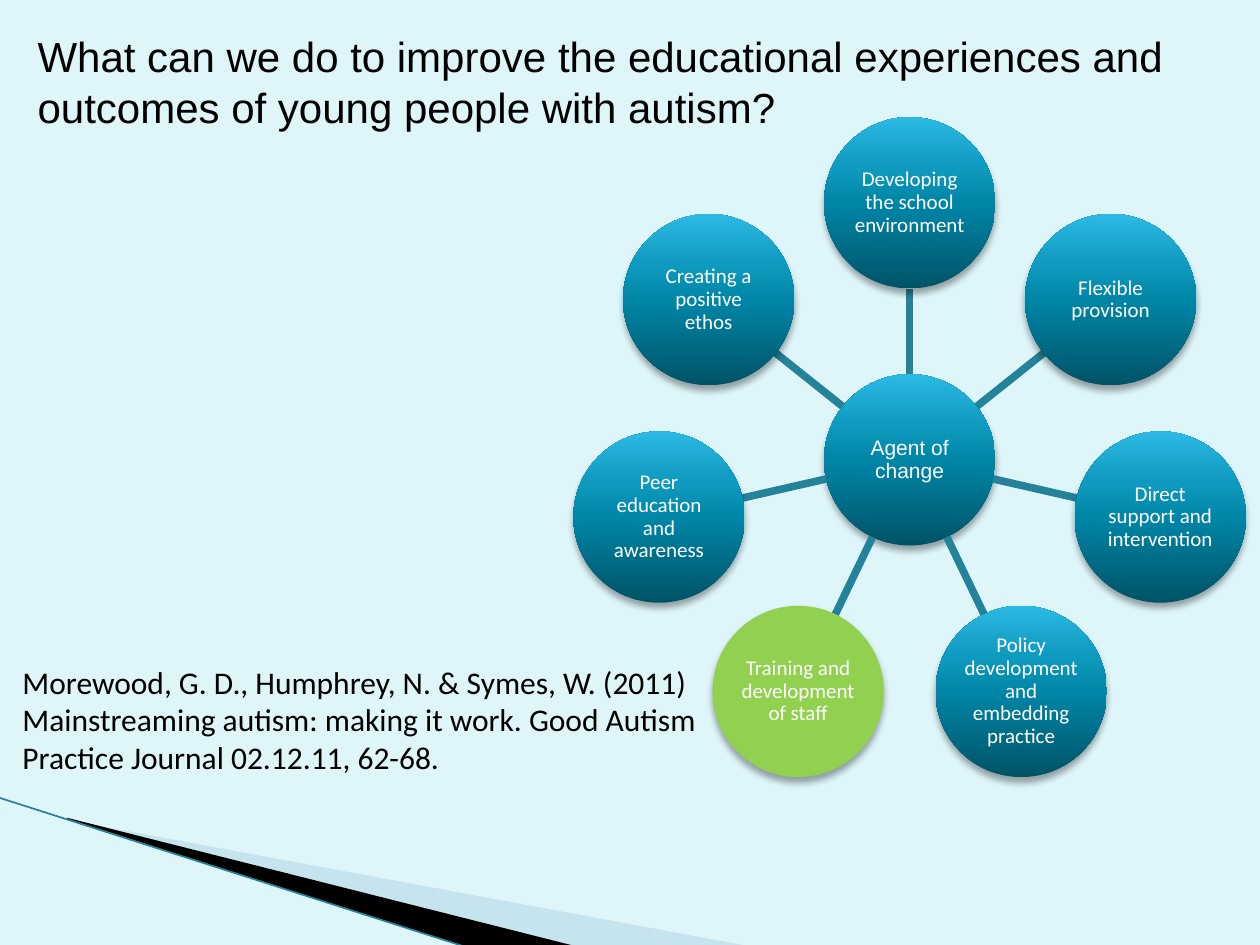
import math
from lxml import etree
from pptx import Presentation
from pptx import util as u
from pptx.dml.color import RGBColor
from pptx.enum import shapes, text
from pptx.oxml.ns import qn

COLUMNS, ROWS = 100, 75
GRADIENT = [(0, "005367"), (50, "0086A7"), (70, "0E9ABE"), (100, "2CB9E3")]
HUB = (72.2, 36.5)
RADIUS, ORBIT = 6.8, 20.4
ACTIONS = [
    "Developing the school environment",
    "Flexible provision",
    "Direct support and intervention",
    "Policy development and embedding practice",
    "Training and development of staff",
    "Peer education and awareness",
    "Creating a positive ethos",
]
HIGHLIGHT = "Training and development of staff"


def color(value):
    """Turn a hex string into a colour."""
    return RGBColor.from_string(value)


def node(parent, tag, **attributes):
    """Append a drawing element with the given attributes."""
    values = {name: str(value) for name, value in attributes.items()}
    return etree.SubElement(parent, qn(f"a:{tag}"), values)


def on_orbit(angle, distance):
    """Return the grid point at a clockwise angle from the top of the hub."""
    return HUB[0] + distance * math.sin(angle), HUB[1] - distance * math.cos(angle)


class Board:
    """Hold the style and the current page, measured in grid columns and rows."""

    def __init__(self, deck, background):
        """Add a blank page with a plain background."""
        self.page = deck.slides.add_slide(deck.slide_layouts[6])
        self.column = deck.slide_width / COLUMNS
        self.row = deck.slide_height / ROWS
        fill = self.page.background.fill
        fill.solid()
        fill.fore_color.rgb = color(background)

    def place(self, x, y):
        """Convert columns and rows to slide lengths."""
        return u.Emu(round(x * self.column)), u.Emu(round(y * self.row))

    def wording(self, frame, words, size, font, ink):
        """Set the wording of a frame and return its paragraph."""
        frame.word_wrap = True
        frame.text = words
        para = frame.paragraphs[0]
        for span in para.runs:
            span.font.size = u.Pt(size)
            span.font.name = font
            span.font.color.rgb = color(ink)
        return para

    def label(self, x, y, width, height, words, size, font, anchor):
        """Add a text box."""
        box = self.page.shapes.add_textbox(*self.place(x, y), *self.place(width, height))
        box.text_frame.vertical_anchor = anchor
        self.wording(box.text_frame, words, size, font, "000000")

    def blade(self, points, fill, opacity=100):
        """Add a filled outline without a border."""
        start, *others = [self.place(*point) for point in points]
        builder = self.page.shapes.build_freeform(*start)
        builder.add_line_segments(others, close=True)
        shape = builder.convert_to_shape()
        shape.shadow.inherit = False
        shape.fill.solid()
        shape.fill.fore_color.rgb = color(fill)
        shape.line.fill.background()
        tint = shape._element.spPr.find(".//" + qn("a:srgbClr"))
        node(tint, "alpha", val=opacity * 1000)

    def line(self, start, end, ink, width):
        """Add a straight connector."""
        link = self.page.shapes.add_connector(
            shapes.MSO_CONNECTOR.STRAIGHT, *self.place(*start), *self.place(*end))
        link.line.color.rgb = color(ink)
        link.line.width = u.Pt(width)
        node(link._element.spPr, "effectLst")

    def circle(self, center, words, font="Calibri", fill=None):
        """Add a shadowed circle with centred text, in the gradient unless a fill is given."""
        x, y = center
        shape = self.page.shapes.add_shape(
            shapes.MSO_SHAPE.OVAL, *self.place(x - RADIUS, y - RADIUS),
            *self.place(2 * RADIUS, 2 * RADIUS))
        shape.line.fill.background()
        if fill:
            shape.fill.solid()
            shape.fill.fore_color.rgb = color(fill)
        else:
            self.shade(shape)
        self.drop_shadow(shape)
        frame = shape.text_frame
        frame.margin_left = frame.margin_right = u.Inches(0.01)
        frame.margin_top = frame.margin_bottom = u.Inches(0.01)
        frame.vertical_anchor = text.MSO_ANCHOR.MIDDLE
        para = self.wording(frame, words, 12, font, "FFFFFF")
        para.alignment = text.PP_ALIGN.CENTER
        para.line_spacing = 0.9

    def shade(self, shape):
        """Fill a shape with the gradient, dark at the bottom."""
        shape.fill.gradient()
        shape.fill.gradient_angle = 90
        stops = shape._element.spPr.find(".//" + qn("a:gsLst"))
        for stop in list(stops):
            stops.remove(stop)
        for position, value in GRADIENT:
            node(node(stops, "gs", pos=position * 1000), "srgbClr", val=value)

    def drop_shadow(self, shape):
        """Give a shape a soft shadow below it."""
        shape.shadow.inherit = False
        effects = shape._element.spPr.find(qn("a:effectLst"))
        shadow = node(effects, "outerShdw", blurRad=u.Pt(4), dist=u.Pt(3),
                      dir=90 * 60000, rotWithShape=0)
        node(node(shadow, "srgbClr", val="000000"), "alpha", val=35000)


def main():
    """Build the slide and save it."""
    deck = Presentation()
    deck.slide_width, deck.slide_height = u.Inches(10), u.Inches(7.5)
    board = Board(deck, "DEF5FA")
    board.blade([(5.5, 65.1), (59.5, 75.1), (45.6, 75.1), (5.5, 65)], "A0CBDC", 40)
    board.blade([(5.3, 64.9), (45.7, 75.1), (37.2, 75.2), (5.4, 65)], "000000")
    board.line((-0.1, 63.3), (37.1, 75.2), "248299", 0.95)
    board.label(2, 2.1, 96.1, 8.7,
                "What can we do to improve the educational experiences and "
                "outcomes of young people with autism?",
                24, "Arial", text.MSO_ANCHOR.MIDDLE)
    board.circle(HUB, "Agent of change", "Arial")
    for index, action in enumerate(ACTIONS):
        angle = index * math.tau / len(ACTIONS)
        board.line(on_orbit(angle, RADIUS), on_orbit(angle, ORBIT - RADIUS), "248299", 4.33)
        board.circle(on_orbit(angle, ORBIT), action,
                     fill="92D050" if action == HIGHLIGHT else None)
    board.label(0.8, 52.1, 55.5, 10.1,
                "Morewood, G. D., Humphrey, N. & Symes, W. (2011) Mainstreaming autism: "
                "making it work. Good Autism Practice Journal 02.12.11, 62-68.",
                18, "Calibri", text.MSO_ANCHOR.TOP)
    deck.save("out.pptx")


if __name__ == "__main__":
    main()
